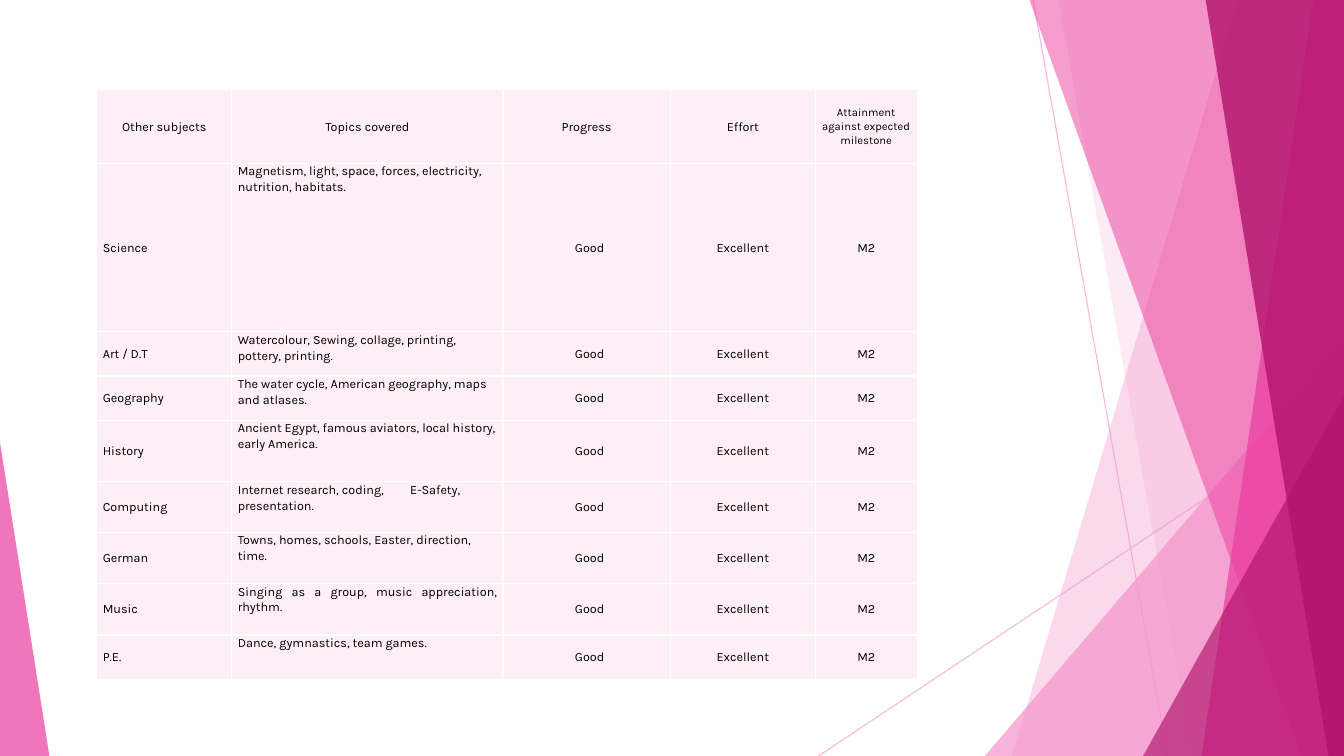
from lxml import etree
from pptx import Presentation, util as u
from pptx.dml import color
from pptx.enum import shapes, text
from pptx.oxml import ns

COLORS = {"pale": "F496CB", "pink": "EB3D9F", "berry": "B2136D",
          "cell": "FDEFF6", "rule": "FFFFFF", "ink": "000000"}
COLS, ROWS = 160, 90  # square grid units, twelve to the inch
LEFT, CENTER, JUSTIFY = (text.PP_ALIGN.LEFT, text.PP_ALIGN.CENTER,
                         text.PP_ALIGN.JUSTIFY)
TOP, MIDDLE = text.MSO_ANCHOR.TOP, text.MSO_ANCHOR.MIDDLE


def rgb(name):
    return color.RGBColor.from_string(COLORS[name])


def sub(parent, tag, **attributes):
    return etree.SubElement(parent, ns.qn(tag), attributes)


class Report:
    font = "Karla"
    size = 9
    line_spacing = 1.07
    inset = 0.72

    def __init__(self):
        self.deck = Presentation()
        self.deck.slide_width = u.Inches(COLS / 12)
        self.deck.slide_height = u.Inches(ROWS / 12)
        self.slide = self.deck.slides.add_slide(self.deck.slide_layouts[6])

    def grid(self, *units):
        return [u.Inches(unit / 12) for unit in units]

    def fade(self, part, opacity):
        fill = part.find(".//" + ns.qn("a:srgbClr"))
        sub(fill, "a:alpha", val=str(opacity * 1000))

    def paint(self, shape, name, opacity):
        shape.shadow.inherit = False
        shape.fill.solid()
        shape.fill.fore_color.rgb = rgb(name)
        shape.line.fill.background()
        self.fade(shape.fill._xPr, opacity)

    def ray(self, x1, y1, x2, y2):
        ray = self.slide.shapes.add_connector(
            shapes.MSO_CONNECTOR.STRAIGHT, *self.grid(x1, y1, x2, y2))
        ray.line.color.rgb = rgb("pale")
        ray.line.width = u.Pt(0.75)
        self.fade(ray.line._ln, 70)
        sub(ray._element.spPr, "a:effectLst")

    def shard(self, top_x, bottom_x, name, opacity):
        """A band from a slanted left side to the right slide edge."""
        outline = self.slide.shapes.build_freeform(*self.grid(top_x, -0.1))
        corners = [(COLS, -0.1), (COLS, ROWS), (bottom_x, ROWS)]
        outline.add_line_segments([self.grid(*c) for c in corners], close=True)
        self.paint(outline.convert_to_shape(), name, opacity)

    def wedge(self, left, top, right, tip, name, opacity):
        """A triangle standing on the bottom slide edge."""
        wedge = self.slide.shapes.add_shape(
            shapes.MSO_SHAPE.ISOSCELES_TRIANGLE,
            *self.grid(left, top, right - left, ROWS - top))
        wedge.adjustments[0] = tip
        self.paint(wedge, name, opacity)

    def table(self, left, top, widths, heights):
        table = self.slide.shapes.add_table(
            len(heights), len(widths),
            *self.grid(left, top, sum(widths), sum(heights))).table
        table.first_row = table.horz_banding = False
        for column, width in zip(table.columns, self.grid(*widths)):
            column.width = width
        for row, height in zip(table.rows, self.grid(*heights)):
            row.height = height
        return table

    def cell(self, cell, lines, align=CENTER, anchor=MIDDLE, size=None,
             indent=0, tab=None):
        cell.vertical_anchor = anchor
        cell.margin_left, cell.margin_right = self.grid(
            self.inset + indent, self.inset)
        cell.margin_top = cell.margin_bottom = 0
        for side in ("a:lnL", "a:lnR", "a:lnT", "a:lnB"):
            border = sub(cell._tc.get_or_add_tcPr(), side, w=str(u.Pt(1)))
            sub(sub(border, "a:solidFill"), "a:srgbClr", val=COLORS["rule"])
        cell.fill.solid()
        cell.fill.fore_color.rgb = rgb("cell")
        frame = cell.text_frame
        for i, line in enumerate(lines):
            paragraph = frame.add_paragraph() if i else frame.paragraphs[0]
            paragraph.alignment = align
            paragraph.line_spacing = self.line_spacing
            if tab:
                stops = sub(paragraph._p.get_or_add_pPr(), "a:tabLst")
                sub(stops, "a:tab", pos=str(self.grid(tab)[0]), algn="l")
            run = paragraph.add_run()
            run.text = line
            run.font.name = self.font
            run.font.size = u.Pt(size or self.size)
            run.font.color.rgb = rgb("ink")

    def save(self):
        self.deck.save("out.pptx")


HEADINGS = [["Other subjects"], ["Topics covered"], ["Progress"], ["Effort"],
            ["Attainment", "against expected milestone"]]
# Subject, topics, row height
SUBJECTS = [
    ("Science", "Magnetism, light, space, forces, electricity, nutrition, habitats.", 20.04),
    ("Art / D.T", "Watercolour, Sewing, collage, printing, pottery, printing.", 5.28),
    ("Geography", "The water cycle, American geography, maps and atlases.", 5.28),
    ("History", "Ancient Egypt, famous aviators, local history, early America.", 7.32),
    ("Computing", "Internet research, coding,\tE-Safety, presentation.", 6),
    ("German", "Towns, homes, schools, Easter, direction, time.", 6.12),
    ("Music", "Singing as a group, music appreciation, rhythm.", 6.12),
    ("P.E.", "Dance, gymnastics, team games.", 5.28),
]


def main():
    report = Report()

    # Facets on the right and left edges
    report.ray(123, 0, 139, ROWS)
    report.ray(COLS, 48.36, 97.44, ROWS)
    report.shard(147.36, 120.48, "pale", 36)
    report.shard(126, 141.96, "pale", 20)
    report.wedge(117.24, 40, COLS, 1, "pale", 72)
    report.shard(122.52, 154.92, "pink", 50)
    report.shard(156.36, 143.04, "pink", 70)
    report.shard(143.52, 158.16, "berry", 80)
    report.wedge(136.08, 47.16, COLS, 1, "berry", 66)
    report.wedge(0, 52.68, 5.88, 0, "pink", 70)

    # Marks table: headings
    marks = report.table(11.52, 10.68, [16.08, 32.28, 19.92, 17.28, 12.12],
                         [8.76] + [height for *_, height in SUBJECTS])
    for column, heading in enumerate(HEADINGS):
        report.cell(marks.cell(0, column), heading,
                    size=8 if len(heading) > 1 else None)

    # Marks table: one row per subject
    for row, (subject, topics, _) in enumerate(SUBJECTS, 1):
        report.cell(marks.cell(row, 0), [subject], LEFT)
        report.cell(marks.cell(row, 1), [topics],
                    JUSTIFY if subject == "Music" else LEFT, TOP,
                    tab=20.52 if "\t" in topics else None)
        report.cell(marks.cell(row, 2), ["Good"], indent=0.72)
        report.cell(marks.cell(row, 3), ["Excellent"])
        report.cell(marks.cell(row, 4), ["M2"])

    report.save()


if __name__ == "__main__":
    main()
